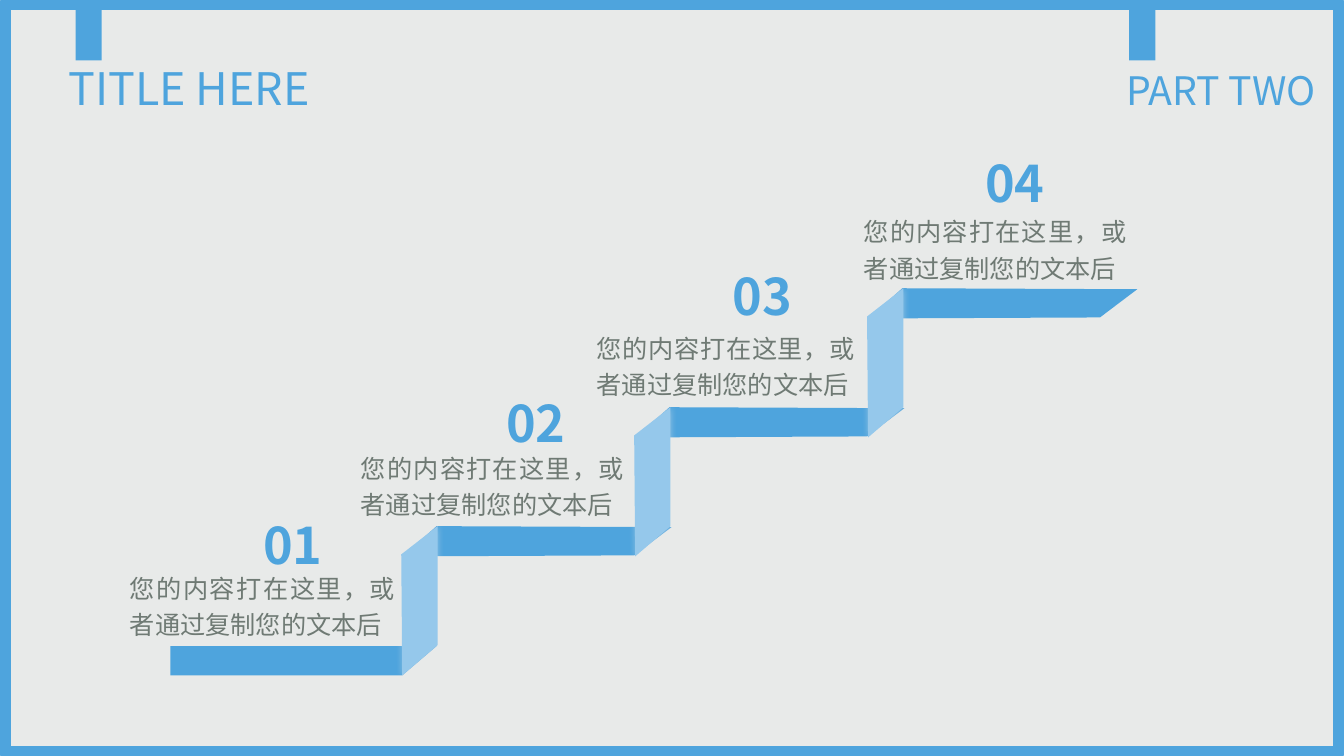
from lxml import etree
from pptx import Presentation
from pptx.dml.color import RGBColor
from pptx.enum.shapes import MSO_SHAPE as SHAPE
from pptx.enum.text import MSO_ANCHOR as ANCHOR, PP_ALIGN as ALIGN
from pptx.oxml.ns import qn
from pptx.util import Inches, Pt

# Content: boxes are left, top, width, height in inches
BODY = "您的内容打在这里，或者通过复制您的文本后"
HEADINGS = [  # text, size name, box
    ("PART TWO", "part", (11.07, 0.71, 2.26, 0.42)),
    ("TITLE HERE", "title", (0.58, 0.62, 6.97, 0.56)),
]
STEPS = [  # number, number left and top, body left, top and width
    ("01", (2.5, 4.93), (1.19, 5.58, 2.83)),
    ("02", (4.91, 3.72), (3.48, 4.39, 2.81)),
    ("03", (7.16, 2.46), (5.82, 3.2, 2.76)),
    ("04", (9.66, 1.34), (8.47, 2.04, 2.8)),
]
TAB_LEFTS = [0.75, 11.2]

# Staircase geometry: outlines of the lowest parts, and the rise per step
FIRST_TREAD = [(1.69, 6.41), (4.33, 6.41), (3.99, 6.7), (1.69, 6.7)]
TREAD = [(3.99, 5.52), (4.33, 5.22), (6.66, 5.23), (6.29, 5.51)]
RISER = [(3.99, 6.7), (4.34, 6.4), (4.34, 5.22), (3.98, 5.5)]
RUN, RISE = 2.31, 1.18

THEME = {
    "font": "Noto Sans CJK SC",
    "back": "E8EAE9", "blue": "4EA4DD", "pale": "95C8EB",
    "grey": "6F7A74", "shadow": "ECECEC",
    "title": 32, "part": 28, "number": 36, "body": 18,
}


def color(name):
    return RGBColor.from_string(THEME[name])


def add_text(slide, text, box, size, ink, align=ALIGN.LEFT, spacing=1.2,
             bold=False, anchor=ANCHOR.TOP):
    tf = slide.shapes.add_textbox(*map(Inches, box)).text_frame
    tf.word_wrap = True
    tf.vertical_anchor = anchor
    tf.text = text
    p = tf.paragraphs[0]
    p.alignment, p.line_spacing = align, spacing
    font = p.runs[0].font
    font.name, font.size, font.bold = THEME["font"], Pt(THEME[size]), bold
    font.color.rgb = color(ink)
    ea = etree.SubElement(p.runs[0].font._element, qn("a:ea"))
    ea.set("typeface", THEME["font"])


def paint(s, fill):
    s.shadow.inherit = False
    s.fill.solid()
    s.fill.fore_color.rgb = color(fill)
    s.line.fill.background()


def add_ribbon(slide, outline, fill, step=0):
    points = [(Inches(x + step * RUN), Inches(y - step * RISE))
              for x, y in outline]
    builder = slide.shapes.build_freeform(*points[0])
    builder.add_line_segments(points[1:], close=True)
    s = builder.convert_to_shape()
    paint(s, fill)
    # Soft, pale glow-like shadow
    effects = s._element.spPr.find(qn("a:effectLst"))
    shadow = etree.SubElement(effects, qn("a:outerShdw"),
                              blurRad=str(Pt(5)), dist="0", dir="0")
    tint = etree.SubElement(shadow, qn("a:srgbClr"), val=THEME["shadow"])
    etree.SubElement(tint, qn("a:alpha"), val="40000")


def main():
    prs = Presentation()
    prs.slide_width, prs.slide_height = Inches(13.33), Inches(7.5)
    slide = prs.slides.add_slide(prs.slide_layouts[6])
    slide.background.fill.solid()
    slide.background.fill.fore_color.rgb = color("back")

    # Frame and hanging tabs
    frame = slide.shapes.add_shape(
        SHAPE.RECTANGLE, *map(Inches, (0.05, 0.04, 13.23, 7.42)))
    frame.shadow.inherit = False
    frame.fill.background()
    frame.line.color.rgb = color("blue")
    frame.line.width = Pt(8.5)
    for left in TAB_LEFTS:
        tab = slide.shapes.add_shape(
            SHAPE.RECTANGLE, *map(Inches, (left, 0.04, 0.26, 0.56)))
        paint(tab, "blue")

    # Headings
    for text, size, box in HEADINGS:
        add_text(slide, text, box, size, "blue", spacing=0.9,
                 anchor=ANCHOR.MIDDLE)

    # Staircase: treads behind, risers in front
    add_ribbon(slide, FIRST_TREAD, "blue")
    for outline, fill in ((TREAD, "blue"), (RISER, "pale")):
        for step in range(len(STEPS) - 1):
            add_ribbon(slide, outline, fill, step)

    # Step captions
    for number, spot, (left, top, width) in STEPS:
        add_text(slide, BODY, (left, top, width, 0.83), "body", "grey",
                 ALIGN.JUSTIFY)
        add_text(slide, number, (*spot, 0.81, 0.76), "number", "blue",
                 ALIGN.CENTER, bold=True)

    prs.save("out.pptx")


if __name__ == "__main__":
    main()
